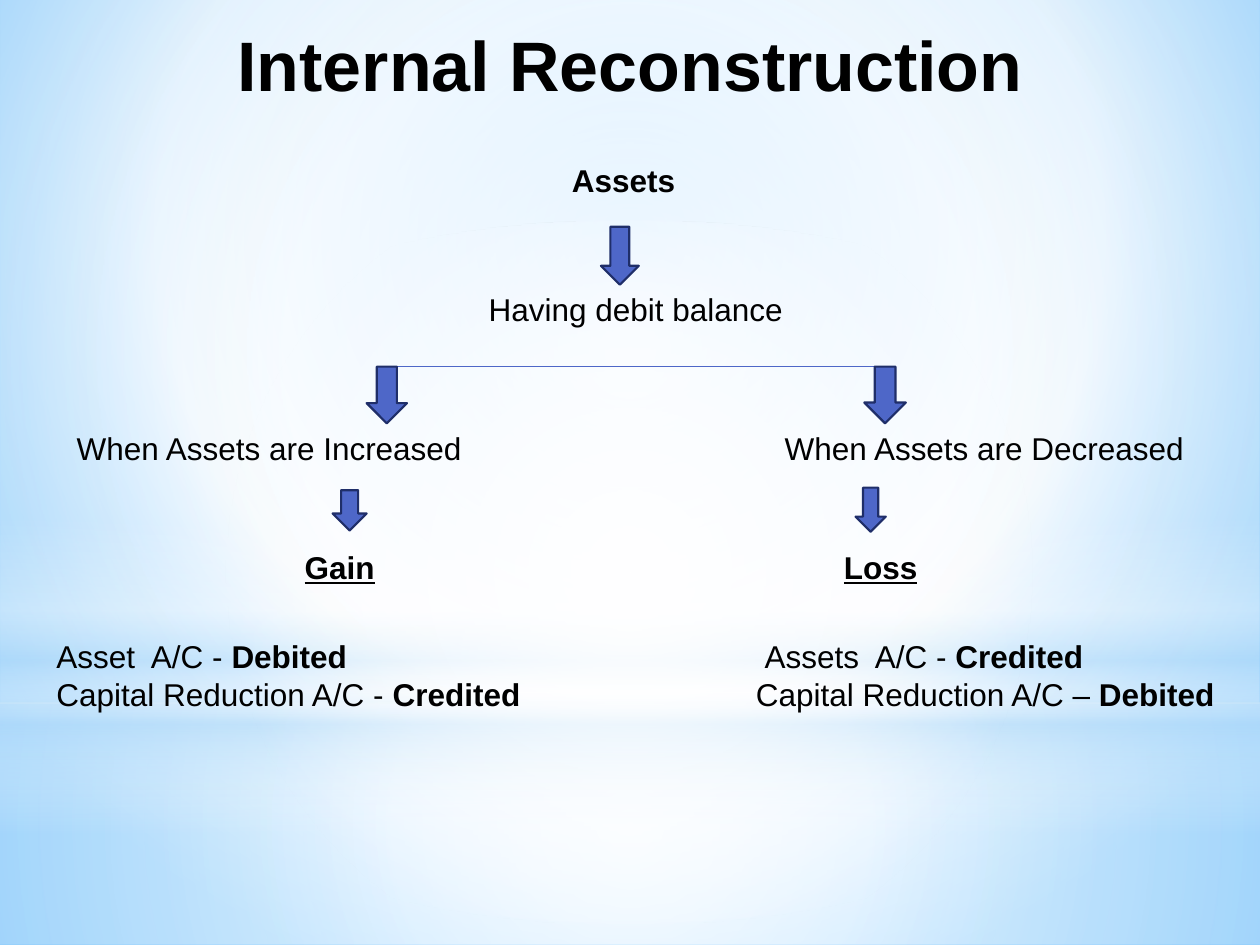
from lxml import etree
from pptx import Presentation
from pptx.dml.color import RGBColor
from pptx.enum.shapes import MSO_CONNECTOR, MSO_SHAPE
from pptx.enum.text import MSO_ANCHOR, PP_ALIGN
from pptx.oxml import parse_xml
from pptx.oxml.ns import nsdecls, qn
from pptx.util import Inches, Pt

RECTANGLE, OVAL, DOWN_ARROW = MSO_SHAPE.RECTANGLE, MSO_SHAPE.OVAL, MSO_SHAPE.DOWN_ARROW
STRAIGHT = MSO_CONNECTOR.STRAIGHT
TOP, CENTER, LEFT = MSO_ANCHOR.TOP, PP_ALIGN.CENTER, PP_ALIGN.LEFT
TITLE_ONLY = 5
CENTERED = (50, 50, 50, 50)


def color(hex_code):
    return RGBColor.from_string(hex_code)


def gradient(fill, element, stops, focus=None):
    """Stops are (position, colour, opacity); without a focus the fill runs top to bottom."""
    fill.gradient()
    grad = element.find(".//" + qn("a:gradFill"))
    stop_xml = "".join(
        f'<a:gs pos="{position * 1000}"><a:srgbClr val="{hex_code}">'
        f'<a:alpha val="{opacity * 1000}"/></a:srgbClr></a:gs>'
        for position, hex_code, opacity in stops)
    if focus:
        sides = " ".join(f'{side}="{share * 1000}"' for side, share in zip("ltrb", focus))
        direction = f'<a:path path="circle"><a:fillToRect {sides}/></a:path>'
    else:
        direction = '<a:lin ang="5400000" scaled="0"/>'
    grad.getparent().replace(grad, parse_xml(
        f'<a:gradFill {nsdecls("a")} rotWithShape="1">'
        f"<a:gsLst>{stop_xml}</a:gsLst>{direction}</a:gradFill>"))


def write(frame, paragraphs, size=18, align=LEFT, first_indent=0):
    """Each paragraph is a list of (text, style) runs; style holds b and u."""
    for index, runs in enumerate(paragraphs):
        paragraph = frame.paragraphs[0] if index == 0 else frame.add_paragraph()
        paragraph.alignment = align
        if index == 0 and first_indent:
            paragraph._p.get_or_add_pPr().set("indent", str(Inches(first_indent)))
        for text, style in runs:
            run = paragraph.add_run()
            run.text = text
            run.font.name = "Arial"
            run.font.size = Pt(size)
            run.font.bold = "b" in style
            run.font.underline = "u" in style
            run.font.color.rgb = color("000000")


class Diagram:
    ACCENT, OUTLINE = "4E67C8", "1F2E69"

    def __init__(self, slide):
        self.slide = slide

    def shape(self, kind, box):
        shape = self.slide.shapes.add_shape(kind, *map(Inches, box))
        shape.shadow.inherit = False
        return shape

    def glow(self, kind, box, stops, focus=None):
        shape = self.shape(kind, box)
        shape.line.fill.background()
        gradient(shape.fill, shape.element, stops, focus)

    def arrow(self, *box):
        arrow = self.shape(DOWN_ARROW, box)
        arrow.fill.solid()
        arrow.fill.fore_color.rgb = color(self.ACCENT)
        arrow.line.color.rgb = color(self.OUTLINE)
        arrow.line.width = Pt(1.25)

    def branch(self, left, right, y):
        line = self.slide.shapes.add_connector(
            STRAIGHT, Inches(left), Inches(y), Inches(right), Inches(y))
        line.line.color.rgb = color(self.ACCENT)
        line.line.width = Pt(0.75)
        etree.SubElement(line.element.spPr, qn("a:effectLst"))

    def title(self, text):
        title = self.slide.shapes.title
        title.left, title.top, title.width, title.height = map(Inches, (0.12, 0.06, 9.76, 1.25))
        frame = title.text_frame
        frame.vertical_anchor = TOP
        frame.margin_top = Inches(0.11)
        write(frame, [[(text, "b")]], size=40, align=CENTER)
        self.slide.shapes.element.append(title.element)  # in front of the backdrop

    def label(self, left, top, width, paragraphs, **style):
        height = 0.1 + 0.3 * len(paragraphs)
        box = self.slide.shapes.add_textbox(*map(Inches, (left, top, width, height)))
        box.text_frame.word_wrap = True
        write(box.text_frame, paragraphs, **style)


def backdrop(diagram):
    slide = diagram.slide
    gradient(slide.background.fill, slide.element,
             [(0, "9ED5FF", 100), (60, "FFFFFF", 100), (100, "5BB9FF", 100)], (20, 10, 20, 60))
    diagram.glow(RECTANGLE, (0, 5.58, 10, 1.92),
                 [(0, "FFFFFF", 91), (37, "FFFFFF", 76), (100, "B4DCFA", 79)], CENTERED)
    diagram.glow(RECTANGLE, (0, 0, 10, 5.58),
                 [(0, "FFFFFF", 89), (48, "FFFFFF", 62), (100, "B4DCFA", 79)], CENTERED)
    diagram.glow(RECTANGLE, (0, 4.12, 10, 2.5),
                 [(0, "FFFFFF", 0), (29, "FFFFFF", 30), (45, "B4DCFA", 40),
                  (55, "FFFFFF", 26), (65, "B4DCFA", 60), (100, "FFFFFF", 0)])
    diagram.glow(OVAL, (0, 1.75, 10, 5.58), [(0, "FFFFFF", 100), (56, "FFFFFF", 0)], CENTERED)


def main():
    deck = Presentation()
    deck.slide_width, deck.slide_height = Inches(10), Inches(7.5)
    diagram = Diagram(deck.slides.add_slide(deck.slide_layouts[TITLE_ONLY]))
    backdrop(diagram)
    diagram.title("Internal Reconstruction")

    diagram.label(4.44, 1.23, 1.1, [[("Assets", "b")]])
    diagram.arrow(4.77, 1.8, 0.3, 0.46)
    diagram.label(3.78, 2.25, 2.7, [[("Having debit balance", "")]])

    diagram.branch(3.02, 7.04, 2.91)
    diagram.arrow(2.91, 2.91, 0.32, 0.45)
    diagram.arrow(6.86, 2.91, 0.33, 0.45)

    diagram.label(0.51, 3.36, 3.5, [[("When Assets are Increased", "")]])
    diagram.label(6.13, 3.36, 3.6, [[("When Assets are Decreased", "")]])
    diagram.arrow(2.64, 3.89, 0.27, 0.32)
    diagram.arrow(6.79, 3.87, 0.24, 0.35)
    diagram.label(2.32, 4.3, 1, [[("Gain", "bu")]])
    diagram.label(6.6, 4.3, 1, [[("Loss", "bu")]])

    diagram.label(0.35, 5.01, 4.1, [
        [("Asset  A/C - ", ""), ("Debited", "b")],
        [("Capital Reduction A/C - ", ""), ("Credited", "b")]])
    diagram.label(5.9, 5.01, 4.05, [
        [("Assets  A/C - ", ""), ("Credited", "b")],
        [("Capital Reduction A/C – ", ""), ("Debited", "b")]], first_indent=0.07)

    deck.save("out.pptx")


if __name__ == "__main__":
    main()
